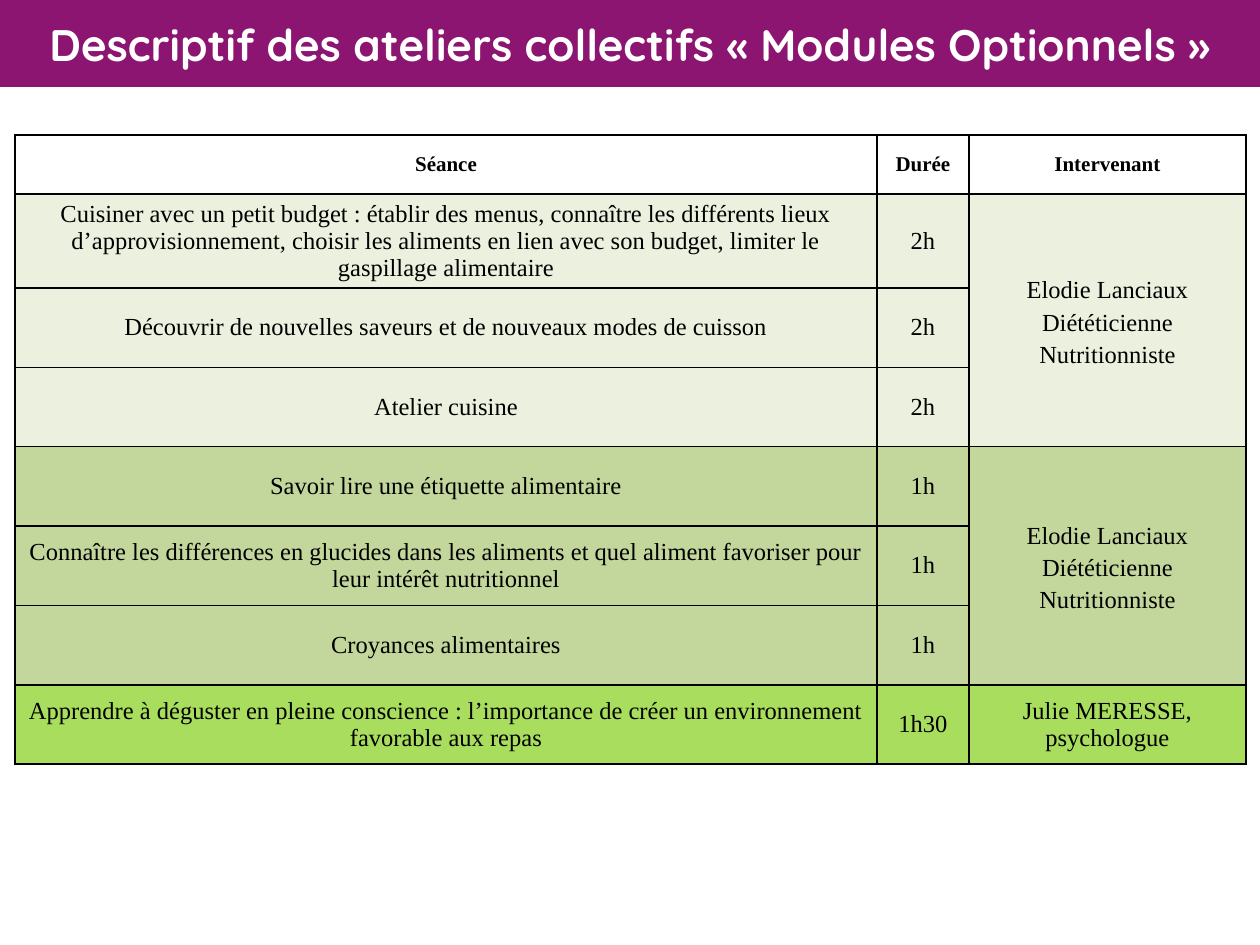
import pptx
import pptx.util
import pptx.dml.color
import pptx.enum.text
import pptx.oxml
import pptx.oxml.ns
import lxml.etree

COLORS = {"banner": "8B1571", "white": "FFFFFF", "ink": "000000",
          "cooking": "EBF1DE", "nutrition": "C3D69B", "mindful": "A9DD5D"}
SLIDE_W, SLIDE_H = 10, 7.5
COLUMNS = [6.84, 0.73, 2.2]
HEADER_H, SESSION_H = 0.47, 0.63
HEADINGS = ["Séance", "Durée", "Intervenant"]
DIETITIAN = ["Elodie Lanciaux", "Diététicienne Nutritionniste"]
# Each group: fill, duration, speaker lines, line spacing, sessions
GROUPS = [
    ("cooking", "2h", DIETITIAN, 1.19, [
        "Cuisiner avec un petit budget : établir des menus, connaître les différents lieux "
        "d’approvisionnement, choisir les aliments en lien avec son budget, limiter le "
        "gaspillage alimentaire",
        "Découvrir de nouvelles saveurs et de nouveaux modes de cuisson",
        "Atelier cuisine"]),
    ("nutrition", "1h", DIETITIAN, 1.19, [
        "Savoir lire une étiquette alimentaire",
        "Connaître les différences en glucides dans les aliments et quel aliment favoriser "
        "pour leur intérêt nutritionnel",
        "Croyances alimentaires"]),
    ("mindful", "1h30", ["Julie MERESSE,", "psychologue"], None, [
        "Apprendre à déguster en pleine conscience : l’importance de créer un "
        "environnement favorable aux repas"]),
]


def rgb(name):
    """Return the named palette colour."""
    return pptx.dml.color.RGBColor.from_string(COLORS[name])


def write(frame, lines, size=14, bold=False, font="Times New Roman", color="ink", spacing=None):
    """Write centred paragraphs into a text frame."""
    frame.word_wrap = True
    for index, line in enumerate(lines):
        paragraph = frame.add_paragraph() if index else frame.paragraphs[0]
        paragraph.alignment = pptx.enum.text.PP_ALIGN.CENTER
        paragraph.space_before = pptx.util.Pt(0)
        paragraph.line_spacing = spacing or 1.0
        run = paragraph.add_run()
        run.text = line
        run.font.size = pptx.util.Pt(size)
        run.font.bold = bold
        run.font.name = font
        run.font.color.rgb = rgb(color)


def style_cell(cell, fill):
    """Give a cell its thin black borders, fill and anchor."""
    properties = cell._tc.get_or_add_tcPr()
    for side in ("lnL", "lnR", "lnT", "lnB"):
        properties.append(pptx.oxml.parse_xml(
            f'<a:{side} {pptx.oxml.ns.nsdecls("a")} w="12700"><a:solidFill>'
            f'<a:srgbClr val="{COLORS["ink"]}"/></a:solidFill></a:{side}>'))
    cell.fill.solid()
    cell.fill.fore_color.rgb = rgb(fill)
    cell.vertical_anchor = pptx.enum.text.MSO_ANCHOR.MIDDLE


def add_banner(slide, text):
    """Turn the title placeholder into the full-width banner."""
    banner = slide.shapes.title
    banner.left = banner.top = 0
    banner.width, banner.height = pptx.util.Inches(SLIDE_W), pptx.util.Inches(0.69)
    banner.fill.solid()
    banner.fill.fore_color.rgb = rgb("banner")
    frame = banner.text_frame
    frame.auto_size = pptx.enum.text.MSO_AUTO_SIZE.NONE
    frame.vertical_anchor = pptx.enum.text.MSO_ANCHOR.MIDDLE
    write(frame, [text], size=25.2, bold=True, font="Quicksand", color="white")


def add_programme(slide):
    """Add the session table, one merged speaker cell per group."""
    heights = [HEADER_H] + [SESSION_H] * sum(len(group[-1]) for group in GROUPS)
    programme = slide.shapes.add_table(
        len(heights), len(COLUMNS), pptx.util.Inches(0.12), pptx.util.Inches(1.07),
        pptx.util.Inches(sum(COLUMNS)), pptx.util.Inches(sum(heights))).table
    for column, width in zip(programme.columns, COLUMNS):
        column.width = pptx.util.Inches(width)
    for row, height in zip(programme.rows, heights):
        row.height = pptx.util.Inches(height)
    for column, heading in enumerate(HEADINGS):
        style_cell(programme.cell(0, column), "white")
        write(programme.cell(0, column).text_frame, [heading], size=12, bold=True)
    first = 1
    for fill, duration, speaker, spacing, sessions in GROUPS:
        for row, session in enumerate(sessions, first):
            for column in range(len(COLUMNS)):
                style_cell(programme.cell(row, column), fill)
            write(programme.cell(row, 0).text_frame, [session])
            write(programme.cell(row, 1).text_frame, [duration])
        speaker_cell = programme.cell(first, 2)
        if len(sessions) > 1:
            speaker_cell.merge(programme.cell(first + len(sessions) - 1, 2))
        write(speaker_cell.text_frame, speaker, spacing=spacing)
        first += len(sessions)


def main():
    """Build and save the slide."""
    deck = pptx.Presentation()
    deck.slide_width = pptx.util.Inches(SLIDE_W)
    deck.slide_height = pptx.util.Inches(SLIDE_H)
    slide = deck.slides.add_slide(deck.slide_layouts[5])
    add_banner(slide, "Descriptif des ateliers collectifs «\u00a0Modules Optionnels\u00a0»")
    add_programme(slide)
    deck.save("out.pptx")


main()
